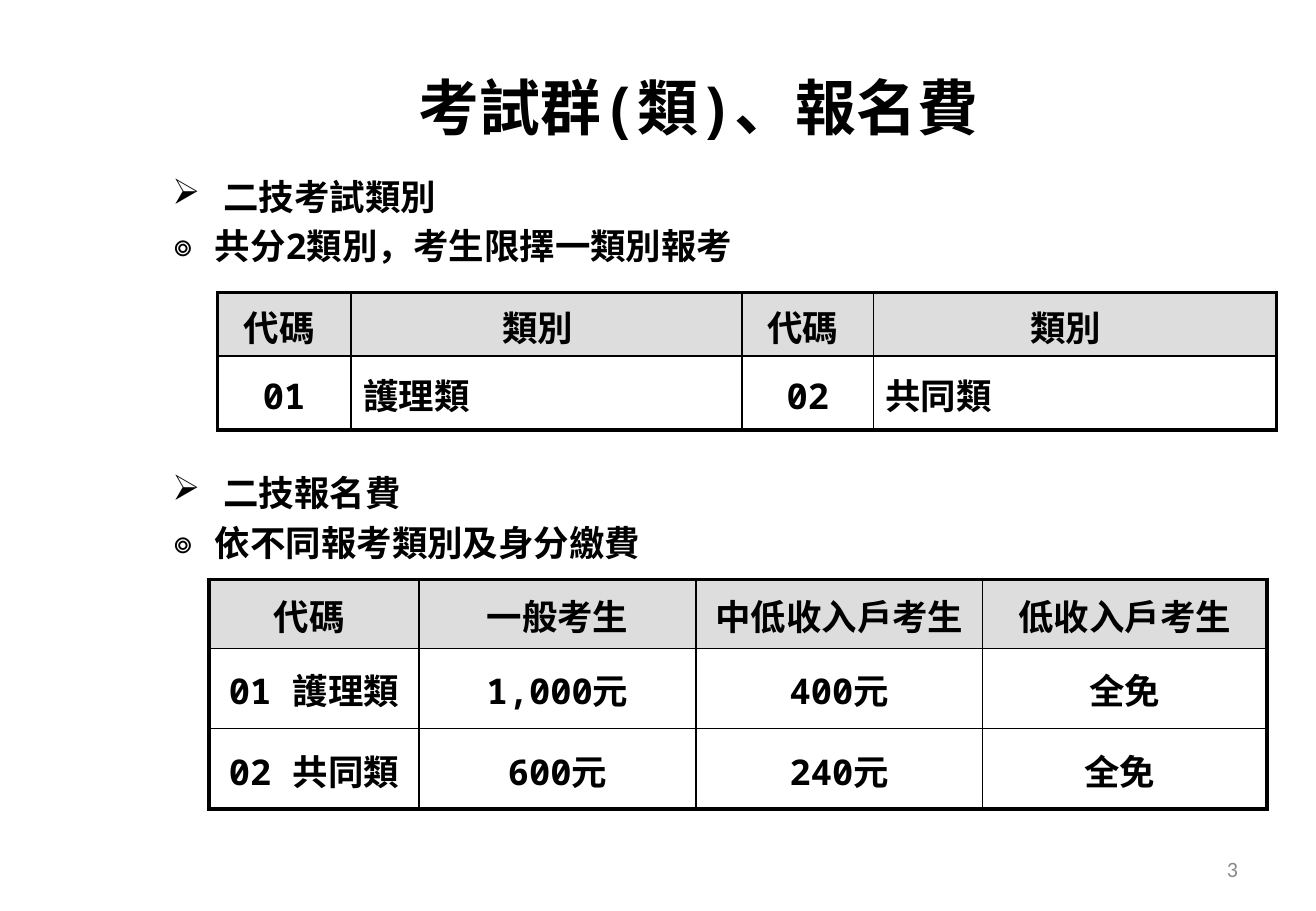
from lxml.etree import SubElement as Sub
from pptx import Presentation
from pptx.dml.color import RGBColor as RGB
from pptx.enum.text import MSO_ANCHOR as Anchor, PP_ALIGN as Align
from pptx.oxml.ns import qn
from pptx.util import Inches, Pt

COLORS = {"ink": "000000", "muted": "898989", "header": "DDDDDD"}
COLS, ROWS = 130, 90
THIN, THICK = 1, 2.25
MONO = {"name": "Noto Sans Mono", "bold": True}
STYLES = {
    "title": ({**MONO, "size": Pt(36)}, "ink"),
    "body": ({**MONO, "size": Pt(21)}, "ink"),
    "number": ({"name": "Calibri", "size": Pt(13)}, "muted"),
}


def apply(target, values):
    for name, value in values.items():
        setattr(target, name, value)


class Deck:
    def __init__(self, width, height):
        self.prs = Presentation()
        apply(self.prs, {"slide_width": Inches(width), "slide_height": Inches(height)})
        self.s = self.prs.slides.add_slide(self.prs.slide_layouts[6])

    def x(self, cols):
        return round(self.prs.slide_width * cols / COLS)

    def y(self, rows):
        return round(self.prs.slide_height * rows / ROWS)

    def put_run(self, p, text, style, align):
        p.alignment = align
        r = p.add_run()
        r.text = text
        values, color = STYLES[style]
        apply(r.font, values)
        r.font.color.rgb = RGB.from_string(COLORS[color])
        Sub(r.font._element, qn("a:ea"), typeface=values["name"])

    def text(self, x, y, w, h, lines, style="body", align=Align.LEFT, anchor=Anchor.MIDDLE):
        sp = self.s.shapes.add_textbox(self.x(x), self.y(y), self.x(w), self.y(h))
        tf = sp.text_frame
        apply(tf, {"word_wrap": True, "vertical_anchor": anchor})
        for i, line in enumerate(lines):
            p = tf.add_paragraph() if i else tf.paragraphs[0]
            if i:
                p.space_before = Pt(4.2)
            self.put_run(p, line, style, align)
        return tf

    def section(self, y, heading, note):
        tf = self.text(15.84, y, 111, 10.44, [heading, note], anchor=Anchor.TOP)
        for p, bullet in zip(tf.paragraphs, ("➢", None)):
            pPr = p._p.get_or_add_pPr()
            pPr.set("marL", str(Inches(0.42)))
            pPr.set("indent", str(-Inches(0.42)))
            if bullet:
                Sub(pPr, qn("a:buChar"), char=bullet)
            else:
                Sub(pPr, qn("a:buNone"))

    def border(self, cell, widths):
        tcPr = cell._tc.get_or_add_tcPr()
        for side, width in zip("LRTB", widths):
            ln = Sub(tcPr, qn(f"a:ln{side}"), w=str(Pt(width)))
            fill = Sub(ln, qn("a:solidFill"))
            Sub(fill, qn("a:srgbClr"), val=COLORS["ink"])

    def table(self, x, y, cols, rows, cells, left_cells=(), pads=None):
        """pads maps (row, column) to extra right margin in inches."""
        last_row, last_col = len(rows) - 1, len(cols) - 1
        tbl = self.s.shapes.add_table(len(rows), len(cols), self.x(x), self.y(y),
                                      self.x(sum(cols)), self.y(sum(rows))).table
        apply(tbl, {"first_row": False, "horz_banding": False})
        for c, w in enumerate(cols):
            tbl.columns[c].width = self.x(w)
        for r, h in enumerate(rows):
            tbl.rows[r].height = self.y(h)
            for c, text in enumerate(cells[r]):
                cell = tbl.cell(r, c)
                apply(cell, {"vertical_anchor": Anchor.MIDDLE, "margin_top": Inches(0.09),
                             "margin_right": Inches(0.1 + (pads or {}).get((r, c), 0))})
                edges = (c == 0, c == last_col, r == 0, r == last_row)
                self.border(cell, [THICK if edge else THIN for edge in edges])
                if r == 0:
                    cell.fill.solid()
                    cell.fill.fore_color.rgb = RGB.from_string(COLORS["header"])
                else:
                    cell.fill.background()
                align = Align.LEFT if (r, c) in left_cells else Align.CENTER
                self.put_run(cell.text_frame.paragraphs[0], text, "body", align)


def main():
    deck = Deck(10.83, 7.5)

    # Title and page number
    deck.text(9, 3, 120, 15, ["考試群(類)、報名費"], "title", Align.CENTER)
    deck.text(93.12, 83.4, 30.36, 4.8, ["3"], "number", Align.RIGHT)

    # Exam categories
    deck.section(16.68, "二技考試類別", "◎ 共分2類別，考生限擇一類別報考")
    deck.table(21.48, 28.92, [13.2, 38.64, 12.96, 39.84], [6.24, 7.32],
               [["代碼", "類別", "代碼", "類別"],
                ["01", "護理類", "02", "共同類"]],
               left_cells={(1, 1), (1, 3)},
               pads={(0, 0): 0.08, (0, 1): 0.15, (0, 2): 0.08, (0, 3): 0.15})

    # Registration fees
    deck.section(45.96, "二技報名費", "◎ 依不同報考類別及身分繳費")
    deck.table(20.64, 57.24, [20.76, 27.36, 28.32, 28.08], [6.84, 7.92, 7.92],
               [["代碼", "一般考生", "中低收入戶考生", "低收入戶考生"],
                ["01 護理類", "1,000元", "400元", "全免"],
                ["02 共同類", "600元", "240元", "全免"]],
               pads={(0, 0): 0.08, (2, 3): 0.08})

    deck.prs.save("out.pptx")


if __name__ == "__main__":
    main()
